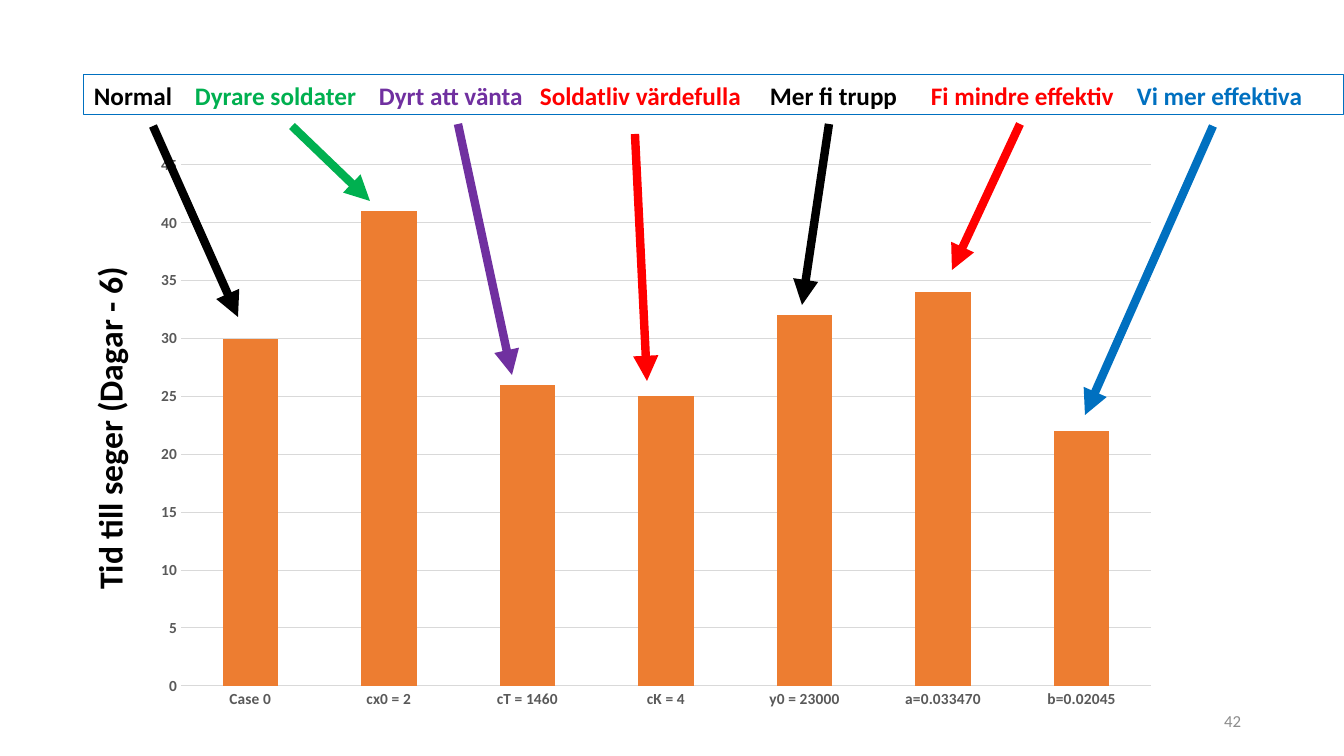
from pptx import Presentation
from pptx import util as u
from pptx.chart import data
from pptx.dml import color
from pptx.enum import chart as ch, shapes, text
from pptx.oxml import parse_xml
from pptx.oxml.ns import nsdecls, qn

HUES = {
    "black": "000000", "green": "00B050", "purple": "7030A0", "red": "FF0000",
    "blue": "0070C0", "orange": "ED7D31", "grey": "595959", "pale": "D9D9D9",
    "number": "8C8C8C",
}
LABELS = [
    ("Normal", "black", 94, (153, 126), (238, 317)),
    ("Dyrare soldater", "green", 195, (292, 126), (370, 201)),
    ("Dyrt att vänta", "purple", 379, (458, 124), (512, 375)),
    ("Soldatliv värdefulla", "red", 540, (635, 134), (647, 381)),
    ("Mer fi trupp", "black", 770, (829, 124), (802, 305)),
    ("Fi mindre effektiv", "red", 931, (1020, 124), (952, 270)),
    ("Vi mer effektiva", "blue", 1137, (1213, 126), (1085, 415)),
]
DAYS = {
    "Case 0": 30, "cx0 = 2": 41, "cT = 1460": 25, "cK = 4": 25,
    "y0 = 23000": 32, "a=0.033470": 34, "b=0.02045": 22,
}
DAYS["cT = 1460"] = 26


class Board:
    font = "Calibri"
    scale = 914400 / 100.8

    def __init__(self, deck):
        deck.slide_width, deck.slide_height = self.px(1344, 756)
        self.slide = deck.slides.add_slide(deck.slide_layouts[6])

    def px(self, *nums):
        return [u.Emu(round(n * self.scale)) for n in nums]

    def hue(self, name):
        return color.RGBColor.from_string(HUES[name])

    def style(self, font, size, name, bold=False):
        font.name, font.size, font.bold = self.font, u.Pt(size), bold
        font.color.rgb = self.hue(name)

    def stroke(self, line, name, width):
        line.color.rgb = self.hue(name)
        line.width = u.Pt(width)

    def number(self, words, *box):
        frame = self.slide.shapes.add_textbox(*self.px(*box)).text_frame
        frame.word_wrap = True
        frame.vertical_anchor = text.MSO_ANCHOR.MIDDLE
        frame.text = words
        para = frame.paragraphs[0]
        para.alignment = text.PP_ALIGN.RIGHT
        self.style(para.runs[0].font, 12, "number")

    def layout(self, parent, box, x, y, *size):
        wide, high = box[2:]
        spots = [("xMode", "edge"), ("yMode", "edge"), ("x", x / wide), ("y", y / high)]
        if size:
            spots.insert(0, ("layoutTarget", "inner"))
            spots += [("w", size[0] / wide), ("h", size[1] / high)]
        body = "".join(f'<c:{tag} val="{val}"/>' for tag, val in spots)
        new = parse_xml(f'<c:layout {nsdecls("c")}><c:manualLayout>{body}'
                        '</c:manualLayout></c:layout>')
        for old in parent.findall(new.tag):
            parent.remove(old)
        parent.insert(0 if parent.find(qn("c:tx")) is None else 1, new)

    def chart(self, title, days, *box):
        source = data.CategoryChartData()
        source.categories = list(days)
        source.add_series("Series 1", list(days.values()))
        kind = ch.XL_CHART_TYPE.COLUMN_STACKED
        chart = self.slide.shapes.add_chart(kind, *self.px(*box), source).chart
        chart.has_legend = chart.has_title = False
        self.style(chart.font, 10, "black")
        plot = chart.plots[0]
        plot.gap_width, plot.overlap, plot.vary_by_categories = 150, 100, False
        fill = plot.series[0].format.fill
        fill.solid()
        fill.fore_color.rgb = self.hue("orange")
        cat, val = chart.category_axis, chart.value_axis
        for axis in (cat, val):
            axis.major_tick_mark = axis.minor_tick_mark = ch.XL_TICK_MARK.NONE
            self.style(axis.tick_labels.font, 11, "grey", True)
        self.stroke(cat.format.line, "pale", 0.75)
        val.format.line.fill.background()
        val.minimum_scale, val.maximum_scale, val.major_unit = 0, 45, 5
        val.has_major_gridlines = True
        self.stroke(val.major_gridlines.format.line, "pale", 0.75)
        head = val.axis_title
        head.text_frame.text = title
        self.style(head.text_frame.paragraphs[0].runs[0].font, 24, "black", True)
        body = head.text_frame._txBody.bodyPr
        body.set("rot", "-5400000")
        body.set("vert", "horz")
        self.layout(head._element, box, 10, 116)
        self.layout(chart._chartSpace.chart.plotArea, box, 110, 20, 970, 521)

    def banner(self, labels, *box):
        shape = self.slide.shapes.add_shape(shapes.MSO_SHAPE.RECTANGLE, *self.px(*box))
        shape.shadow.inherit = False
        shape.fill.background()
        self.stroke(shape.line, "blue", 0.75)
        frame = shape.text_frame
        frame.word_wrap = True
        frame.vertical_anchor = text.MSO_ANCHOR.TOP
        para = frame.paragraphs[0]
        para.alignment = text.PP_ALIGN.LEFT
        start = labels[0][2]
        stops = ""
        for words, name, left, *_ in labels:
            run = para.add_run()
            run.text = words if left == start else "\t" + words
            self.style(run.font, 18, name, True)
            if left > start:
                stops += f'<a:tab pos="{self.px(left - start)[0]}" algn="l"/>'
        para._p.get_or_add_pPr().append(
            parse_xml(f'<a:tabLst {nsdecls("a")}>{stops}</a:tabLst>'))

    def arrow(self, name, start, end):
        line = self.slide.shapes.add_connector(
            shapes.MSO_CONNECTOR.STRAIGHT, *self.px(*start, *end))
        self.stroke(line.line, name, 6)
        line.line._get_or_add_ln().append(
            parse_xml(f'<a:tailEnd {nsdecls("a")} type="triangle"/>'))
        line._element.spPr.append(parse_xml(f'<a:effectLst {nsdecls("a")}/>'))


def main():
    deck = Presentation()
    board = Board(deck)
    board.number("42", 949, 701, 302, 40)
    board.chart("Tid till seger (Dagar - 6)", DAYS, 71, 145, 1103, 576)
    board.banner(LABELS, 84, 75, 1260, 40)
    for _, name, _, start, end in LABELS:
        board.arrow(name, start, end)
    deck.save("out.pptx")


if __name__ == "__main__":
    main()
